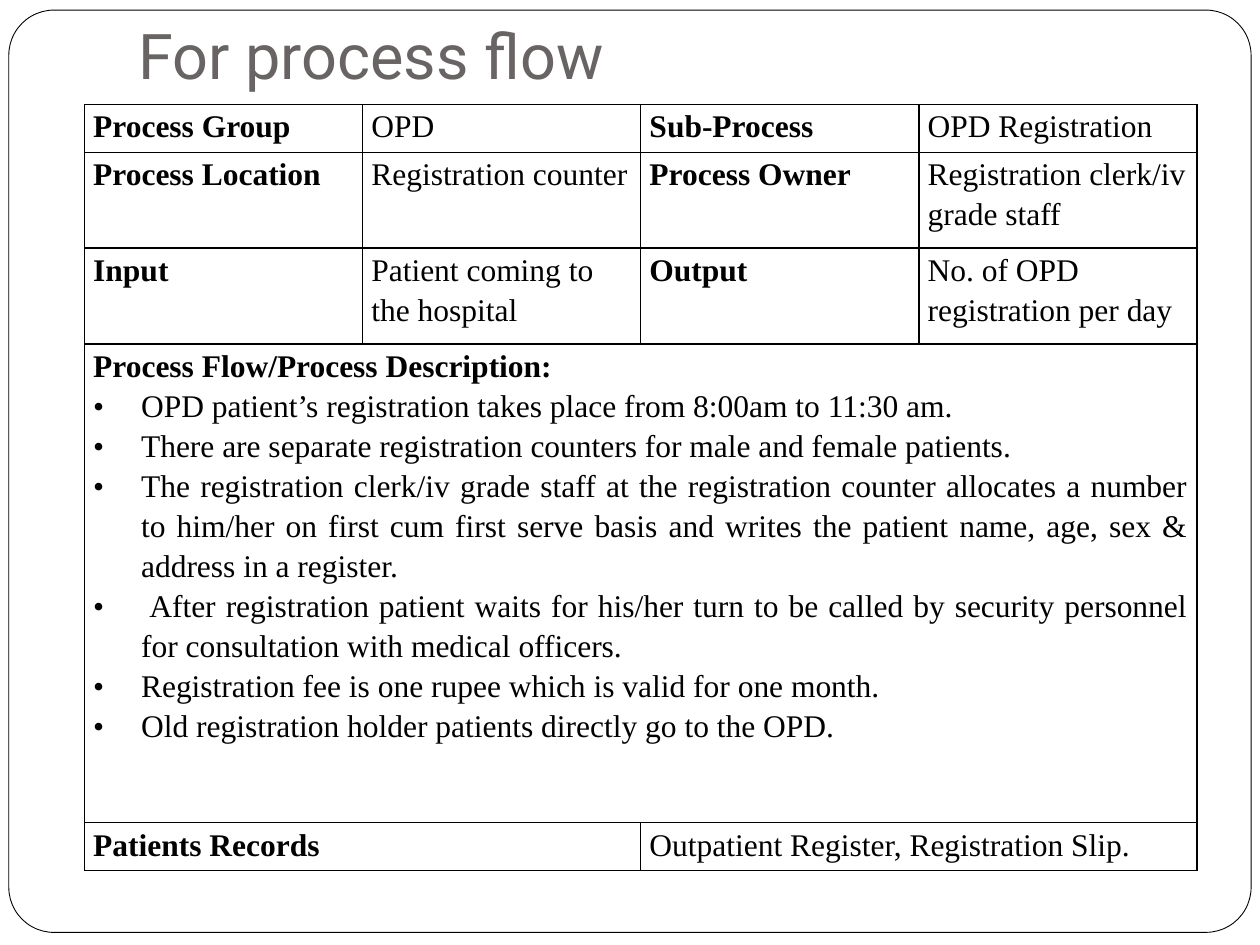
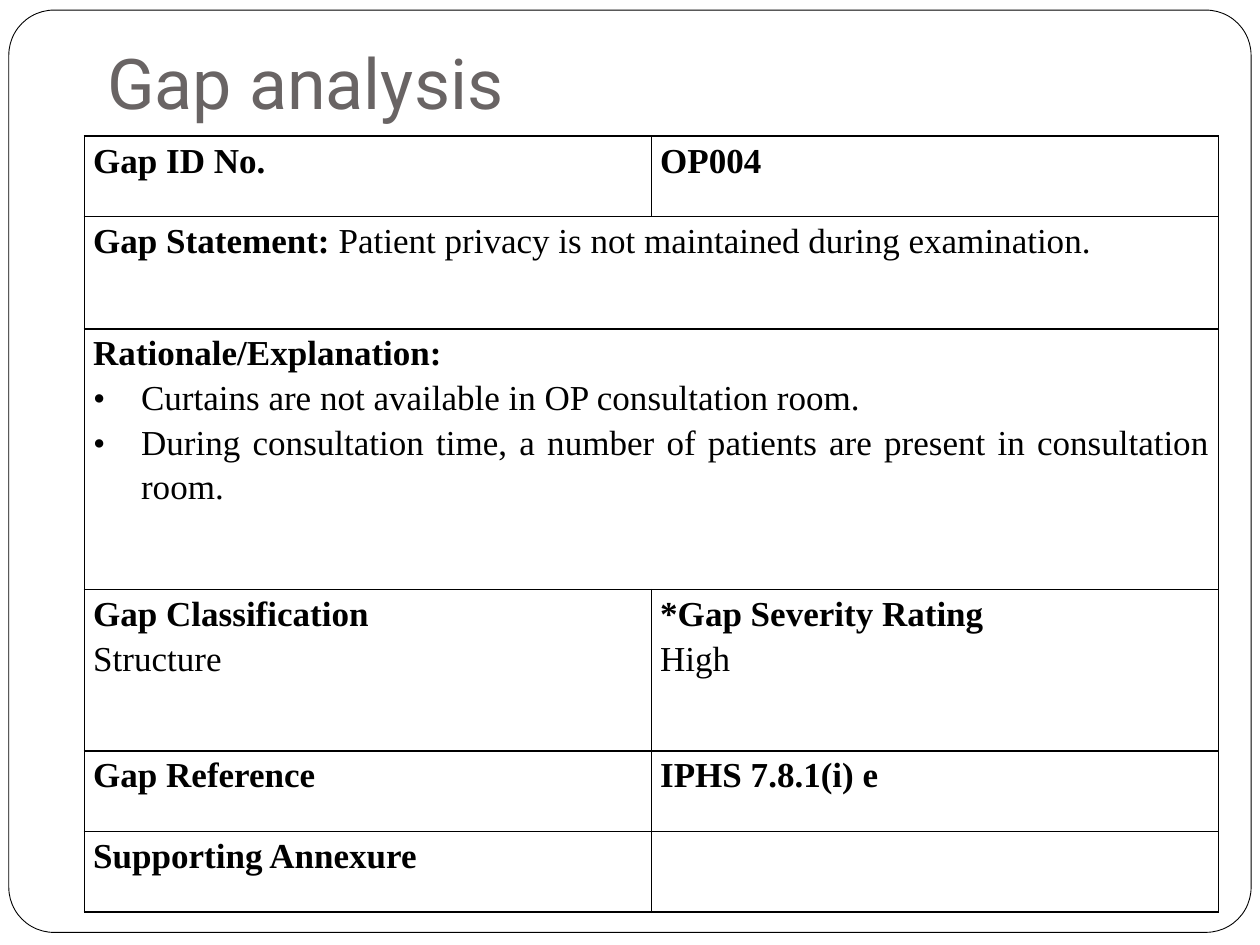
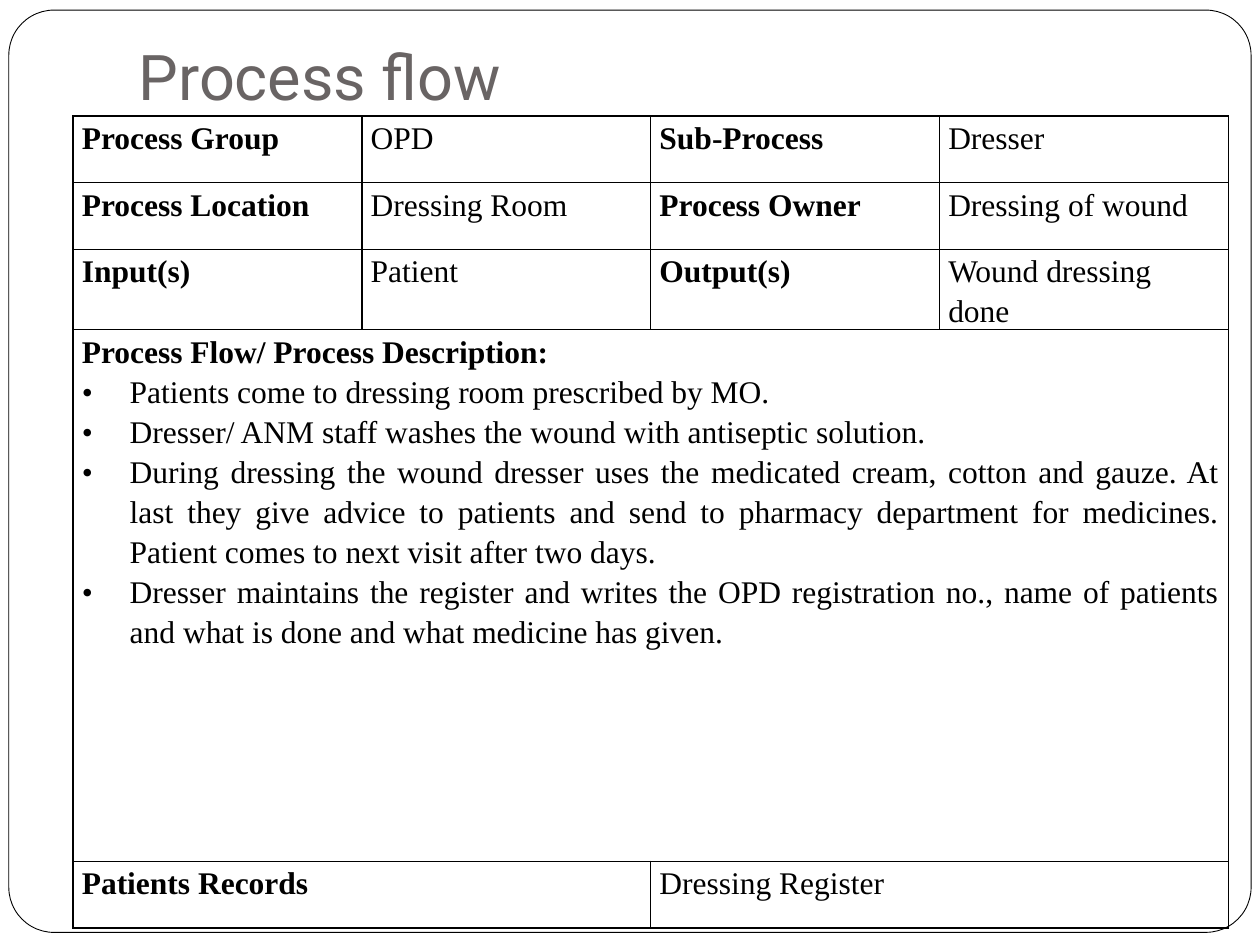
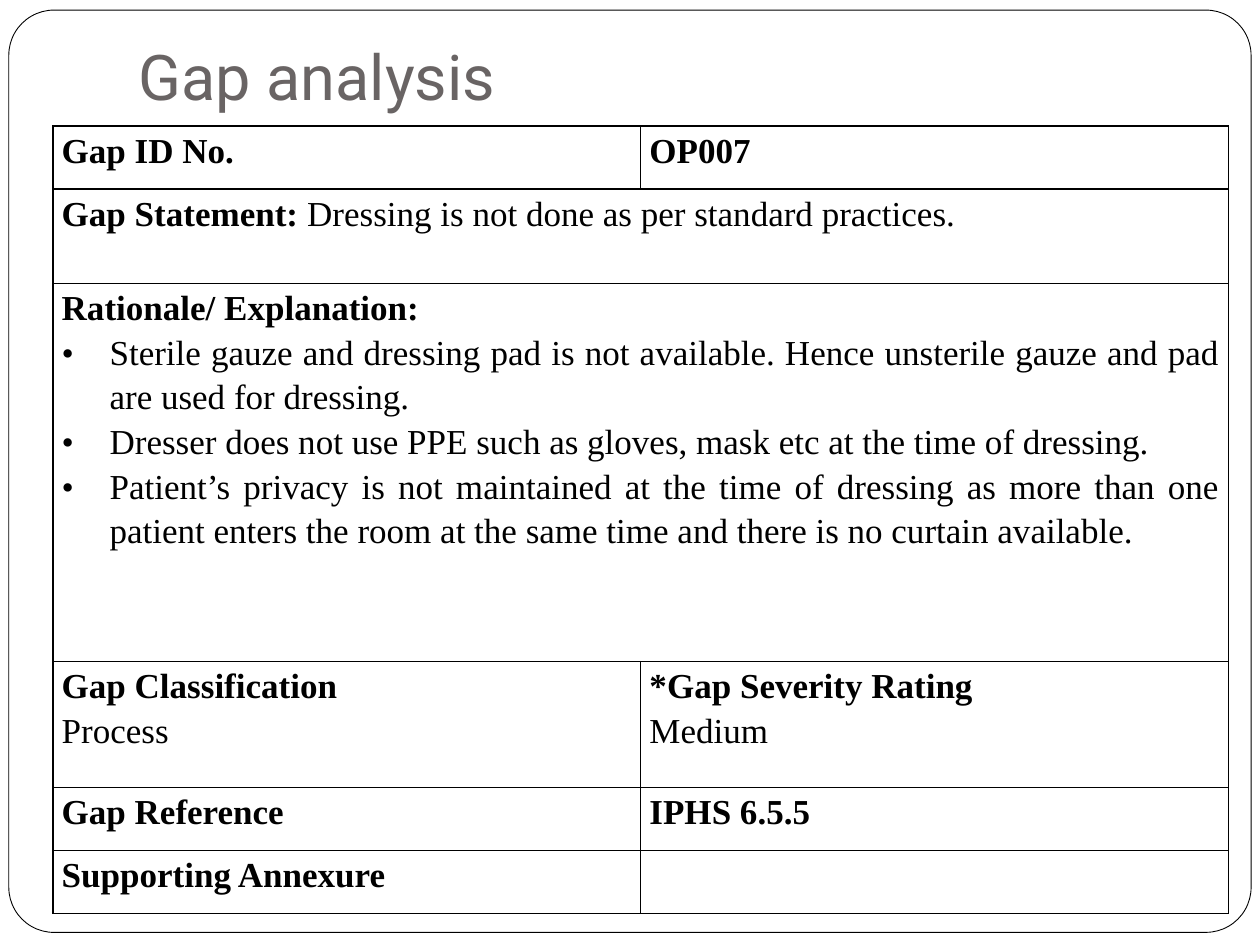
from dataclasses import dataclass

from lxml import etree
from pptx import Presentation
from pptx import util as u
from pptx.dml.color import RGBColor
from pptx.enum import shapes, text
from pptx.oxml import ns


@dataclass(frozen=True)
class Theme:
    paper = RGBColor(0xFF, 0xFF, 0xFF)
    ink = RGBColor(0, 0, 0)
    title_ink = RGBColor(0x69, 0x64, 0x64)
    title_font = "Roboto"
    body_font = "Times New Roman"
    title_size = 36
    large_title_size = 40
    process_size = 18
    gap_size = 20
    line_spacing = 1.15
    frame_line = 0.5
    border = 1
    cell_margin = 0.07
    bullet_indent = 0.38


THEME = Theme()
TITLE_ONLY = 5


@dataclass
class Para:
    """One paragraph: a bold label, then plain text."""
    label: str = ""
    plain: str = ""
    bullet: bool = False


def label(words):
    return [Para(label=words)]


def plain(words):
    return [Para(plain=words)]


def bulleted(heading, items):
    return label(heading) + [Para(plain=item, bullet=True) for item in items]


def process_rows(facts, heading, steps, records):
    """Facts are (label, value, label, value) for each of the top rows."""
    rows = [[label(a), plain(b), label(c), plain(d)] for a, b, c, d in facts]
    return rows + [[bulleted(heading, steps)],
                   [label("Patients Records"), plain(records)]]


def gap_rows(gap_id, statement, heading, reasons, classification, severity, reference):
    return [
        [label("Gap ID No."), label(gap_id)],
        [[Para("Gap Statement: ", statement)]],
        [bulleted(heading, reasons)],
        [label("Gap Classification") + plain(classification),
         label("*Gap Severity Rating") + plain(severity)],
        [label("Gap Reference"), label(reference)],
        [label("Supporting Annexure"), []],
    ]


def add_frame(page):
    """Draw the rounded frame behind everything else on the page."""
    frame = page.shapes.add_shape(
        shapes.MSO_SHAPE.ROUNDED_RECTANGLE,
        u.Inches(0.07), u.Inches(0.08), u.Inches(9.86), u.Inches(7.32))
    frame.adjustments[0] = 0.049
    frame.shadow.inherit = False
    frame.fill.solid()
    frame.fill.fore_color.rgb = THEME.paper
    frame.line.color.rgb = THEME.ink
    frame.line.width = u.Pt(THEME.frame_line)
    page.shapes.element.insert(2, frame.element)


def set_title(page, words, left, top, height, size):
    title = page.shapes.title
    title.left, title.top = u.Inches(left), u.Inches(top)
    title.width, title.height = u.Inches(8.5), u.Inches(height)
    box = title.text_frame
    box.text = words
    box.word_wrap = True
    box.auto_size = text.MSO_AUTO_SIZE.NONE
    box.vertical_anchor = text.MSO_ANCHOR.BOTTOM
    box.margin_left = box.margin_right = box.margin_bottom = u.Inches(0.1)
    box.margin_top = u.Inches(0.05)
    para = box.paragraphs[0]
    para.alignment = text.PP_ALIGN.LEFT
    font = para.runs[0].font
    font.name, font.size = THEME.title_font, u.Pt(size)
    font.color.rgb = THEME.title_ink


def add_page(deck, words, left, top, height, size=THEME.title_size):
    page = deck.slides.add_slide(deck.slide_layouts[TITLE_ONLY])
    add_frame(page)
    set_title(page, words, left, top, height, size)
    return page


def style_cell(cell):
    properties = cell._tc.get_or_add_tcPr()
    for side in ("L", "R", "T", "B"):
        line = etree.SubElement(properties, ns.qn(f"a:ln{side}"),
                                w=str(u.Pt(THEME.border)))
        fill = etree.SubElement(line, ns.qn("a:solidFill"))
        etree.SubElement(fill, ns.qn("a:srgbClr"), val=str(THEME.ink))
    cell.fill.background()
    cell.margin_left = cell.margin_right = u.Inches(THEME.cell_margin)
    cell.margin_top = cell.margin_bottom = 0


def add_bullet(para):
    indent = u.Inches(THEME.bullet_indent)
    properties = para._p.get_or_add_pPr()
    properties.set("marL", str(indent))
    properties.set("indent", str(-indent))
    etree.SubElement(properties, ns.qn("a:buFont"), typeface=THEME.body_font)
    etree.SubElement(properties, ns.qn("a:buChar"), char="•")


def write_cell(cell, content, size):
    box = cell.text_frame
    for index, entry in enumerate(content):
        para = box.add_paragraph() if index else box.paragraphs[0]
        para.line_spacing = THEME.line_spacing
        if entry.bullet:
            para.alignment = text.PP_ALIGN.JUSTIFY
            add_bullet(para)
        for words, bold in ((entry.label, True), (entry.plain, False)):
            if words:
                span = para.add_run()
                span.text = words
                span.font.name, span.font.size = THEME.body_font, u.Pt(size)
                span.font.bold = bold
                span.font.color.rgb = THEME.ink


def add_form(page, rows, left, top, width, heights, size):
    """Draw a bordered table; rows with fewer cells spread them evenly."""
    columns = max(len(row) for row in rows)
    table = page.shapes.add_table(
        len(rows), columns, u.Inches(left), u.Inches(top),
        u.Inches(width), u.Inches(sum(heights))).table
    table.first_row = table.horz_banding = False
    for column in table.columns:
        column.width = u.Inches(width / columns)
    for cell in table.iter_cells():
        style_cell(cell)
    for number, (row, height) in enumerate(zip(rows, heights)):
        table.rows[number].height = u.Inches(height)
        span = columns // len(row)
        for index, content in enumerate(row):
            first = index * span
            cell = table.cell(number, first)
            if span > 1:
                cell.merge(table.cell(number, first + span - 1))
            write_cell(cell, content, size)


def main():
    deck = Presentation()
    deck.slide_width, deck.slide_height = u.Inches(10), u.Inches(7.5)

    page = add_page(deck, "For process flow", 1, 0.3, 0.53)
    registration = process_rows(
        [("Process Group", "OPD", "Sub-Process", "OPD Registration"),
         ("Process Location", "Registration counter",
          "Process Owner", "Registration clerk/iv grade staff"),
         ("Input", "Patient coming to the hospital",
          "Output", "No. of OPD registration per day")],
        "Process Flow/Process Description:",
        ["OPD patient’s registration takes place from 8:00am to 11:30 am.",
         "There are separate registration counters for male and female patients.",
         "The registration clerk/iv grade staff at the registration counter allocates "
         "a number to him/her on first cum first serve basis and writes the patient "
         "name, age, sex & address in a register.",
         " After registration patient waits for his/her turn to be called by security "
         "personnel for consultation with medical officers.",
         "Registration fee is one rupee which is valid for one month.",
         "Old registration holder patients directly go to the OPD."],
        "Outpatient Register, Registration Slip.")
    add_form(page, registration, 0.67, 0.83, 8.83,
             [0.38, 0.76, 0.76, 3.8, 0.38], THEME.process_size)

    page = add_page(deck, "Gap analysis", 0.75, 0.25, 0.83, THEME.large_title_size)
    privacy_gap = gap_rows(
        "OP004", "Patient privacy is not maintained during examination.",
        "Rationale/Explanation:",
        ["Curtains are not available in OP consultation room.",
         "During consultation time, a number of patients are present in "
         "consultation room."],
        "Structure", "High", "IPHS 7.8.1(i) e")
    add_form(page, privacy_gap, 0.67, 1.08, 9,
             [0.64, 0.89, 2.07, 1.28, 0.64, 0.64], THEME.gap_size)

    page = add_page(deck, "Process flow", 1, 0.3, 0.7)
    dressing = process_rows(
        [("Process Group", "OPD", "Sub-Process", "Dresser"),
         ("Process Location", "Dressing Room", "Process Owner", "Dressing of wound"),
         ("Input(s)", "Patient", "Output(s)", "Wound dressing done")],
        "Process Flow/ Process Description:",
        ["Patients come to dressing room prescribed by MO.",
         "Dresser/ ANM staff washes the wound with antiseptic solution.",
         "During dressing the wound dresser uses the medicated cream, cotton and "
         "gauze. At last they give advice to patients and send to pharmacy department "
         "for medicines. Patient comes to next visit after two days.",
         "Dresser maintains the register and writes the OPD registration no., name of "
         "patients and what is done and what medicine has given."],
        "Dressing Register")
    add_form(page, dressing, 0.58, 0.92, 9.17,
             [0.53, 0.53, 0.53, 4.22, 0.53], THEME.process_size)

    page = add_page(deck, "Gap analysis", 1, 0.3, 0.7)
    dressing_gap = gap_rows(
        "OP007", "Dressing is not done as per standard practices.",
        "Rationale/ Explanation:",
        ["Sterile gauze and dressing pad is not available. Hence unsterile gauze and "
         "pad are used for dressing.",
         "Dresser does not use PPE such as gloves, mask etc at the time of dressing.",
         "Patient’s privacy is not maintained at the time of dressing as more than one "
         "patient enters the room at the same time and there is no curtain available."],
        "Process", "Medium", "IPHS 6.5.5")
    add_form(page, dressing_gap, 0.42, 1, 9.33,
             [0.5, 0.75, 3, 1, 0.5, 0.5], THEME.gap_size)

    deck.save("out.pptx")


if __name__ == "__main__":
    main()
